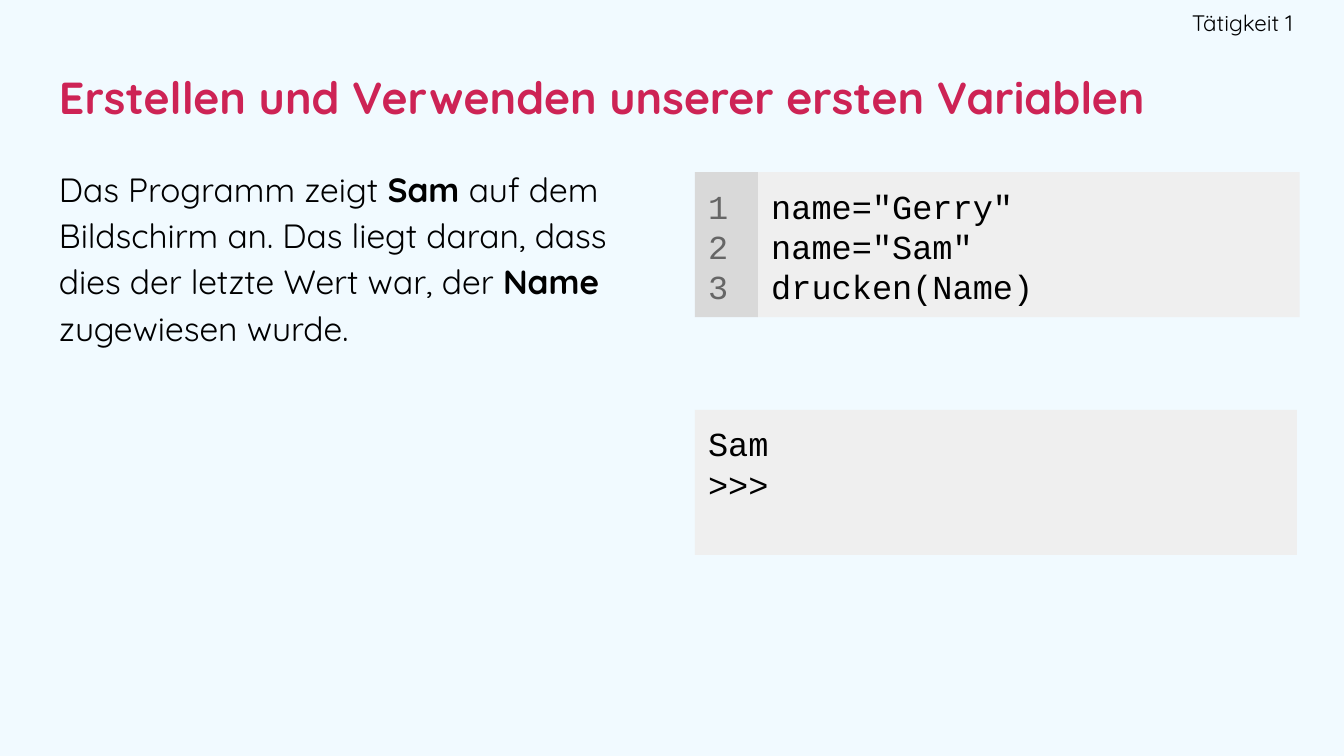
from pptx import Presentation
from pptx.dml.color import RGBColor
from pptx.enum.shapes import MSO_SHAPE
from pptx.enum.text import MSO_ANCHOR, PP_ALIGN
from pptx.util import Inches, Pt

WIDTH = 10
HEIGHT = WIDTH * 9 / 16
MARGIN = 0.34
COLUMN = 4.48
RIGHT = 5.17
PANEL_HEIGHT = 1.08
GUTTER = 0.47
INSET = 0.1

SKY = RGBColor(0xF1, 0xFA, 0xFF)
BLACK = RGBColor(0x00, 0x00, 0x00)
CRIMSON = RGBColor(0xCD, 0x23, 0x55)
PANEL = RGBColor(0xEF, 0xEF, 0xEF)
GUTTER_FILL = RGBColor(0xD9, 0xD9, 0xD9)
GUTTER_TEXT = RGBColor(0x66, 0x66, 0x66)


def inches(box):
    return [Inches(v) for v in box]


def set_frame(tf, anchor=MSO_ANCHOR.TOP, right=INSET):
    tf.word_wrap = True
    tf.vertical_anchor = anchor
    tf.margin_left = tf.margin_top = tf.margin_bottom = Inches(INSET)
    tf.margin_right = Inches(right)


def set_font(r, name, size, color, bold=False):
    r.font.name = name
    r.font.size = Pt(size)
    r.font.color.rgb = color
    r.font.bold = bold


def add_heading(s, box, text, size, color, bold=False,
                align=PP_ALIGN.LEFT, right=INSET):
    tf = s.shapes.add_textbox(*inches(box)).text_frame
    set_frame(tf, MSO_ANCHOR.MIDDLE, right)
    p = tf.paragraphs[0]
    p.text = text
    p.alignment = align
    set_font(p.runs[0], "Quicksand", size, color, bold)


def add_body(s, box, parts):
    tf = s.shapes.add_textbox(*inches(box)).text_frame
    set_frame(tf)
    p = tf.paragraphs[0]
    p.line_spacing = 1.15
    p.space_after = Pt(16)
    for text, bold in parts:
        r = p.add_run()
        r.text = text
        set_font(r, "Quicksand", 18, BLACK, bold)


def add_panel(s, box, lines, fill=PANEL, color=BLACK):
    sp = s.shapes.add_shape(MSO_SHAPE.RECTANGLE, *inches(box))
    sp.shadow.inherit = False
    sp.fill.solid()
    sp.fill.fore_color.rgb = fill
    sp.line.fill.background()
    tf = sp.text_frame
    set_frame(tf)
    tf.text = "\n".join(lines)
    for p in tf.paragraphs:
        p.alignment = PP_ALIGN.LEFT
        set_font(p.runs[0], "Courier New", 18, color)


def add_code(s, box, lines):
    left, top, width, height = box
    numbers = [str(i) for i in range(1, len(lines) + 1)]
    add_panel(s, (left + GUTTER, top, width - GUTTER, height), lines)
    add_panel(s, (left, top, GUTTER, height), numbers, GUTTER_FILL, GUTTER_TEXT)


def main():
    prs = Presentation()
    prs.slide_width, prs.slide_height = inches((WIDTH, HEIGHT))
    s = prs.slides.add_slide(prs.slide_layouts[6])
    s.background.fill.solid()
    s.background.fill.fore_color.rgb = SKY

    add_body(s, (MARGIN, 1.11, COLUMN, 4), [
        ("Das Programm zeigt ", False),
        ("Sam ", True),
        ("auf dem Bildschirm an. Das liegt daran, dass dies der letzte "
         "Wert war, der ", False),
        ("Name ", True),
        ("zugewiesen wurde.", False),
    ])
    add_heading(s, (MARGIN, MARGIN, WIDTH - 2 * MARGIN, 0.76),
                "Erstellen und Verwenden unserer ersten Variablen",
                24, CRIMSON, bold=True)
    add_heading(s, (7.48, 0, 2.14, MARGIN), "Tätigkeit 1", 12, BLACK,
                align=PP_ALIGN.RIGHT, right=0)
    add_code(s, (RIGHT, 1.28, 4.5, PANEL_HEIGHT),
             ['name="Gerry"', 'name="Sam"', "drucken(Name)"])
    add_panel(s, (RIGHT, 3.05, COLUMN, PANEL_HEIGHT), ["Sam", ">>>"])
    prs.save("out.pptx")


if __name__ == "__main__":
    main()
